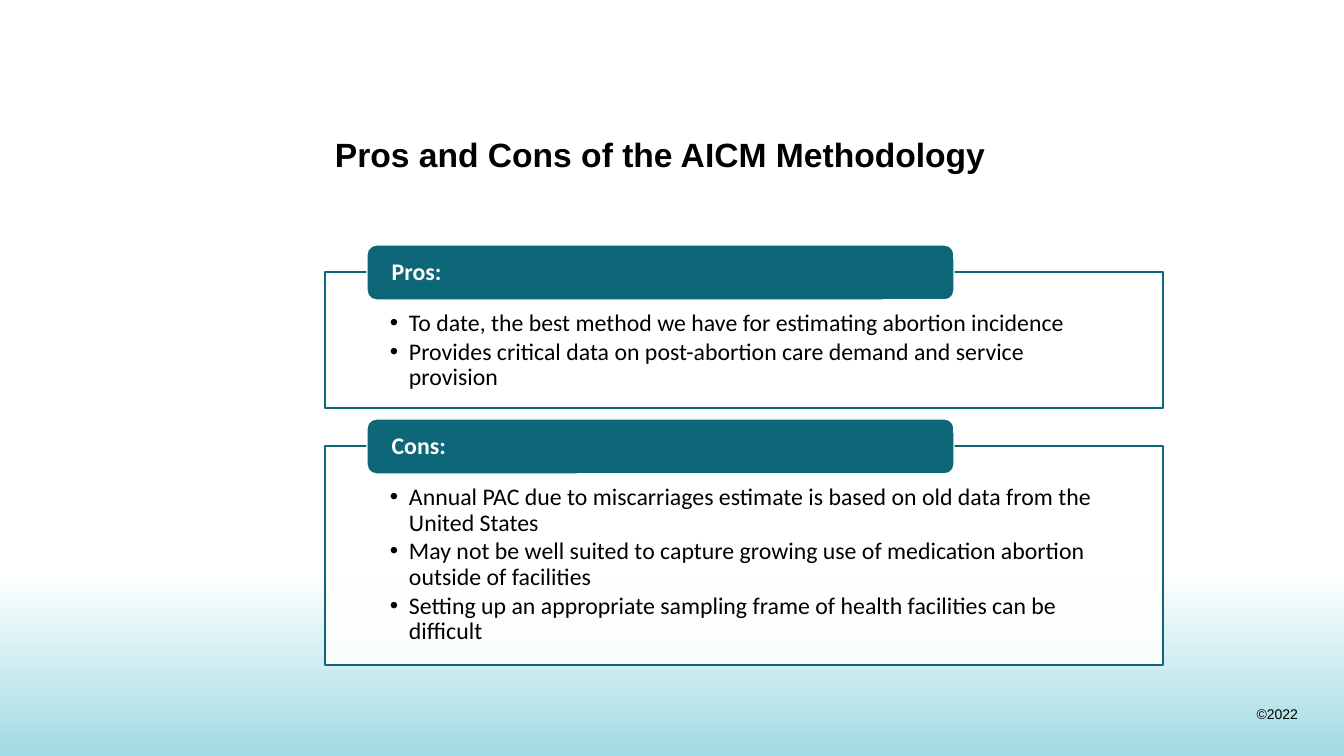
from dataclasses import dataclass

from lxml.etree import SubElement
from pptx import Presentation
from pptx.dml.color import RGBColor
from pptx.enum.shapes import MSO_SHAPE
from pptx.enum.text import MSO_ANCHOR, MSO_AUTO_SIZE, PP_ALIGN
from pptx.oxml.ns import qn
from pptx.util import Pt

SCALE = 914400 / 100.8  # EMU in one px


def px(*nums):
    return [round(n * SCALE) for n in nums]


@dataclass(frozen=True)
class Theme:
    teal: str = "0E6779"
    aqua: str = "A1DBE4"
    white: str = "FFFFFF"
    black: str = "000000"
    head: str = "Arial"
    body: str = "Calibri"
    title: int = 24
    text: int = 17
    note: int = 10


class Deck:
    def __init__(self, theme, slide):
        self.theme = theme
        self.slide = slide

    def place(self, shape, box):
        shape.left, shape.top, shape.width, shape.height = px(*box)

    def font(self, para, name, size, color, bold=False):
        font = para.font
        font.name, font.size, font.bold = name, Pt(size), bold
        font.color.rgb = RGBColor.from_string(color)

    def paint(self, shape, fill, line):
        shape.fill.solid()
        shape.fill.fore_color.rgb = RGBColor.from_string(fill)
        shape.line.color.rgb = RGBColor.from_string(line)
        shape.line.width = Pt(1)

    def inset(self, frame, left, top, right, low):
        (frame.margin_left, frame.margin_top,
         frame.margin_right, frame.margin_bottom) = px(left, top, right, low)

    def fade(self, box):
        band = self.slide.shapes.add_shape(MSO_SHAPE.RECTANGLE, *px(*box))
        band.shadow.inherit = False
        band.line.fill.background()
        band.fill.gradient()
        band.fill.gradient_angle = 270
        ends = (0, self.theme.white), (1, self.theme.aqua)
        for stop, (pos, color) in zip(band.fill.gradient_stops, ends):
            stop.position = pos
            stop.color.rgb = RGBColor.from_string(color)
        # Send behind the placeholders
        band.element.getparent().insert(2, band.element)

    def title(self, text, box):
        shape = self.slide.shapes.title
        self.place(shape, box)
        frame = shape.text_frame
        frame.text = text
        frame.auto_size = MSO_AUTO_SIZE.NONE
        frame.vertical_anchor = MSO_ANCHOR.TOP
        self.inset(frame, 10, 5, 10, 5)
        para = frame.paragraphs[0]
        para.alignment = PP_ALIGN.LEFT
        self.font(para, self.theme.head, self.theme.title, self.theme.black, True)

    def note(self, text, box):
        frame = self.slide.shapes.add_textbox(*px(*box)).text_frame
        frame.text = text
        frame.word_wrap = True
        frame.auto_size = MSO_AUTO_SIZE.NONE
        self.inset(frame, 0, 5, 10, 5)
        para = frame.paragraphs[0]
        para.alignment = PP_ALIGN.RIGHT
        self.font(para, self.theme.head, self.theme.note, self.theme.black)

    def panel(self, shape, items, box):
        self.place(shape, box)
        self.paint(shape, self.theme.white, self.theme.teal)
        tint = shape.fill._xPr.find(qn("a:solidFill"))[0]
        SubElement(tint, qn("a:alpha"), val="90000")
        frame = shape.text_frame
        frame.text = "\n".join(items)
        frame.auto_size = MSO_AUTO_SIZE.NONE
        frame.vertical_anchor = MSO_ANCHOR.TOP
        self.inset(frame, 65, 39, 65, 13)
        hang = px(19)[0]
        for para in frame.paragraphs:
            para.level = 1
            props = para._p.get_or_add_pPr()
            props.set("marL", str(hang))
            props.set("indent", str(-hang))
            SubElement(props, qn("a:buChar"), char="•")
            para.line_spacing = 0.9
            para.space_before = Pt(0)
            para.space_after = Pt(2)
            self.font(para, self.theme.body, self.theme.text, self.theme.black)

    def tab(self, text, box):
        shape = self.slide.shapes.add_shape(MSO_SHAPE.ROUNDED_RECTANGLE, *px(*box))
        shape.shadow.inherit = False
        self.paint(shape, self.theme.teal, self.theme.white)
        frame = shape.text_frame
        frame.text = text
        frame.word_wrap = True
        frame.vertical_anchor = MSO_ANCHOR.MIDDLE
        self.inset(frame, 22, 0, 22, 0)
        para = frame.paragraphs[0]
        para.alignment = PP_ALIGN.LEFT
        para.line_spacing = 0.9
        self.font(para, self.theme.body, self.theme.text, self.theme.white, True)


LEFT, WIDTH = 325, 838
PARTS = [
    ("Pros:", 272, 136, [
        "To date, the best method we have for estimating abortion incidence",
        "Provides critical data on post-abortion care demand and service provision",
    ]),
    ("Cons:", 446, 219, [
        "Annual PAC due to miscarriages estimate is based on old data from the United States",
        "May not be well suited to capture growing use of medication abortion outside of facilities",
        "Setting up an appropriate sampling frame of health facilities can be difficult",
    ]),
]


def main():
    show = Presentation()
    show.slide_width, show.slide_height = px(1344, 756)
    slide = show.slides.add_slide(show.slide_layouts[3])
    deck = Deck(Theme(), slide)

    # Backdrop and copyright line
    deck.fade((0, 572, 1344, 184))
    deck.note("©2022", (1246, 701, 62, 27))

    # Heading
    deck.title("Pros and Cons of the AICM Methodology", (LEFT, 129, WIDTH, 73))

    # Framed lists, each with a tab over its top edge
    for slot, (name, top, tall, items) in enumerate(PARTS, 1):
        deck.panel(slide.placeholders[slot], items, (LEFT, top, WIDTH, tall))
        deck.tab(name, (LEFT + 42, top - 27, 587, 55))

    show.save("out.pptx")


if __name__ == "__main__":
    main()
